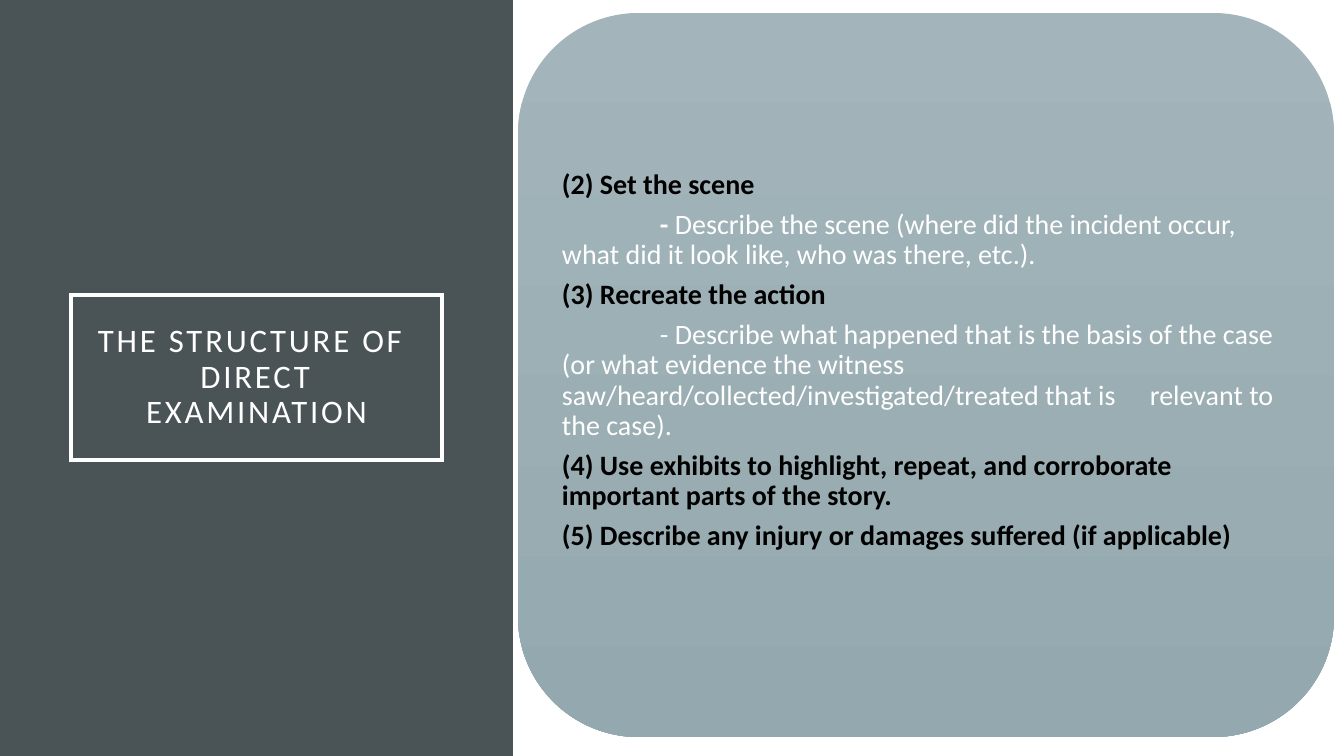
from lxml import etree
from pptx import Presentation
from pptx.dml.color import RGBColor
from pptx.enum.shapes import MSO_SHAPE
from pptx.enum.text import MSO_ANCHOR, PP_ALIGN
from pptx.oxml.ns import qn
from pptx.util import Emu, Pt

RECT, ROUNDED = MSO_SHAPE.RECTANGLE, MSO_SHAPE.ROUNDED_RECTANGLE
MIDDLE = MSO_ANCHOR.MIDDLE
LEFT, CENTER = PP_ALIGN.LEFT, PP_ALIGN.CENTER
PX = 914400 / 100.8
COLORS = {
    "sidebar": "4A5356",
    "white": "FFFFFF",
    "black": "000000",
    "panel_top": "A3B5BB",
    "panel_bottom": "93A9AF",
}


def px(*values):
    return [Emu(round(v * PX)) for v in values]


def set_text(sp, insets, align):
    tf = sp.text_frame
    tf.word_wrap = True
    tf.vertical_anchor = MIDDLE
    tf.margin_left, tf.margin_top, tf.margin_right, tf.margin_bottom = px(*insets)
    for p in tf.paragraphs:
        p.alignment = align
        p.line_spacing = 0.9
        for r in p.runs:
            r.font.name = "Calibri"
    return tf


prs = Presentation()
prs.slide_width, prs.slide_height = px(1344, 756)
s = prs.slides.add_slide(prs.slide_layouts[6])

# Dark sidebar
sp = s.shapes.add_shape(RECT, *px(0, 0, 513, 756))
sp.shadow.inherit = False
sp.fill.solid()
sp.fill.fore_color.rgb = RGBColor.from_string(COLORS["sidebar"])
sp.line.fill.background()

# Framed title with sharp corners
sp = s.shapes.add_shape(RECT, *px(71, 295, 371, 165))
sp.shadow.inherit = False
sp.fill.background()
sp.line.color.rgb = RGBColor.from_string(COLORS["white"])
sp.line.width = Pt(2.5)
ln = sp._element.spPr.find(qn("a:ln"))
etree.SubElement(ln, qn("a:miter")).set("lim", "800000")
sp.text_frame.paragraphs[0].text = "THE STRUCTURE OF \vDIRECT EXAMINATION"
tf = set_text(sp, (20, 20, 20, 20), CENTER)
for r in tf.paragraphs[0].runs:
    r.font.size = Pt(23.4)
    r.font.color.rgb = RGBColor.from_string(COLORS["white"])
    r.font._element.set("spc", "200")

# Rounded panel with a vertical gradient
sp = s.shapes.add_shape(ROUNDED, *px(518, 13, 816, 724))
sp.shadow.inherit = False
sp.line.fill.background()
sp.fill.gradient()
sp.fill.gradient_angle = 270
for stop, position, name in zip(sp.fill.gradient_stops, (0, 1), ("panel_top", "panel_bottom")):
    stop.position = position
    stop.color.rgb = RGBColor.from_string(COLORS[name])

# Steps: each run is (text, colour, bold)
STEPS = [
    [("(2) Set the scene", "black", True)],
    [("\t- ", "white", True),
     ("Describe the scene (where did the incident occur, \t"
      "what did it look like, who was there, etc.).", "white", False)],
    [("(3) Recreate the action", "black", True)],
    [("\t- Describe what happened that is the basis of the case \t"
      "(or what evidence the witness \t"
      "saw/heard/collected/investigated/treated that is \t"
      "relevant to the case).", "white", False)],
    [("(4) Use exhibits to highlight, repeat, and corroborate "
      "important parts of the story.", "black", True)],
    [("(5) Describe any injury or damages suffered (if applicable)", "black", True)],
]
sp = s.shapes.add_textbox(*px(553, 48, 746, 654))
tf = sp.text_frame
for i, step in enumerate(STEPS):
    p = tf.paragraphs[0] if i == 0 else tf.add_paragraph()
    p.space_after = Pt(7)
    p._p.get_or_add_pPr().set("defTabSz", str(px(98)[0]))
    for text, color, bold in step:
        r = p.add_run()
        r.text = text
        r.font.size = Pt(20)
        r.font.bold = bold
        r.font.color.rgb = RGBColor.from_string(COLORS[color])
set_text(sp, (9, 8, 8, 36), LEFT)

prs.save("out.pptx")
